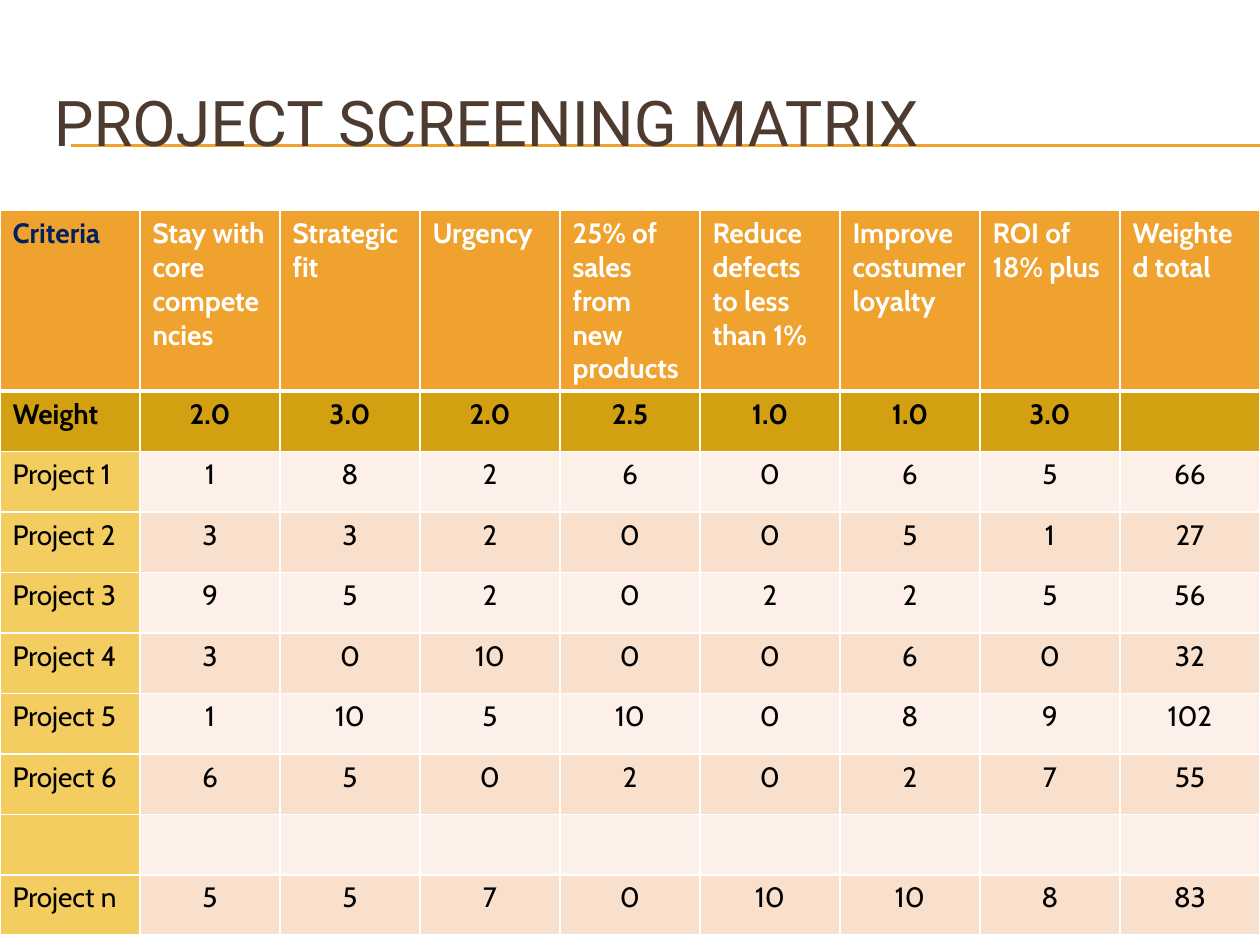
from lxml import etree
from pptx import Presentation
from pptx.dml.color import RGBColor
from pptx.enum.shapes import MSO_CONNECTOR
from pptx.enum.text import MSO_ANCHOR, PP_ALIGN as Align
from pptx.oxml.ns import qn
from pptx.util import Inches, Pt

ORANGE, GOLD, YELLOW = "F0A22E", "D2A010", "F3CD60"
BANDS = ["FCF0E8", "F9E0CD"]
WHITE, BLACK, NAVY, BROWN = "FFFFFF", "000000", "002060", "4E3B30"

CRITERIA = ["Criteria", "Stay with core competencies", "Strategic fit", "Urgency",
            "25% of sales from new products", "Reduce defects to less than 1%",
            "Improve costumer loyalty", "ROI of 18% plus", "Weighted total"]
WEIGHTS = ["Weight", "2.0", "3.0", "2.0", "2.5", "1.0", "1.0", "3.0", ""]
PROJECTS = [
    ["Project 1", 1, 8, 2, 6, 0, 6, 5, 66],
    ["Project 2", 3, 3, 2, 0, 0, 5, 1, 27],
    ["Project 3", 9, 5, 2, 0, 2, 2, 5, 56],
    ["Project 4", 3, 0, 10, 0, 0, 6, 0, 32],
    ["Project 5", 1, 10, 5, 10, 0, 8, 9, 102],
    ["Project 6", 6, 5, 0, 2, 0, 2, 7, 55],
    [""] * len(CRITERIA),
    ["Project n", 5, 5, 7, 0, 10, 10, 8, 83],
]


def write(frame, text, size=16, face="Cabin", color=BLACK, bold=False, align=Align.LEFT):
    paragraph = frame.paragraphs[0]
    paragraph.alignment = align
    if not text:
        paragraph.font.size = Pt(size)
        return
    run = paragraph.add_run()
    run.text = text
    run.font.size, run.font.name, run.font.bold = Pt(size), face, bold
    run.font.color.rgb = RGBColor.from_string(color)


def paint(cell, fill, bottom):
    """Fill the cell and give it white borders, the lower one `bottom` points wide."""
    properties = cell._tc.get_or_add_tcPr()
    for side, width in (("L", 1), ("R", 1), ("T", 1), ("B", bottom)):
        border = etree.SubElement(properties, qn(f"a:ln{side}"), w=str(Pt(width)))
        solid = etree.SubElement(border, qn("a:solidFill"))
        etree.SubElement(solid, qn("a:srgbClr"), val=WHITE)
    cell.fill.solid()
    cell.fill.fore_color.rgb = RGBColor.from_string(fill)


prs = Presentation()
prs.slide_width, prs.slide_height = Inches(10), Inches(7.5)
slide = prs.slides.add_slide(prs.slide_layouts[6])

# Double rule behind the title
for y in (1.15, 1.16):
    rule = slide.shapes.add_connector(MSO_CONNECTOR.STRAIGHT, Inches(0.56), Inches(y),
                                      Inches(10), Inches(y))
    rule.line.color.rgb = RGBColor.from_string(ORANGE)
    rule.line.width = Pt(0.75)
    etree.SubElement(rule._element.spPr, qn("a:effectLst"))

title = slide.shapes.add_textbox(Inches(0.33), Inches(0.5), Inches(9.5), Inches(0.92)).text_frame
title.word_wrap = True
title.vertical_anchor = MSO_ANCHOR.MIDDLE
write(title, "PROJECT SCREENING MATRIX", size=36, face="Roboto", color=BROWN)

# Screening matrix
rows = [CRITERIA, WEIGHTS] + PROJECTS
matrix = slide.shapes.add_table(len(rows), len(CRITERIA), Inches(0), Inches(1.67),
                                Inches(10), Inches(5.5)).table
for column in matrix.columns:
    column.width = Inches(10 / len(CRITERIA))
for r, values in enumerate(rows):
    matrix.rows[r].height = Inches(0.75 if r == 0 else 0.48)
    for c, value in enumerate(values):
        cell = matrix.cell(r, c)
        color = BLACK
        if r == 0:
            fill = ORANGE
            color = NAVY if c == 0 else WHITE
        elif r == 1:
            fill = GOLD
        else:
            fill = YELLOW if c == 0 else BANDS[r % 2]
        paint(cell, fill, bottom=3 if r == 0 else 1)
        write(cell.text_frame, str(value), color=color, bold=r < 2,
              align=Align.LEFT if r == 0 or c == 0 else Align.CENTER)

prs.save("out.pptx")
